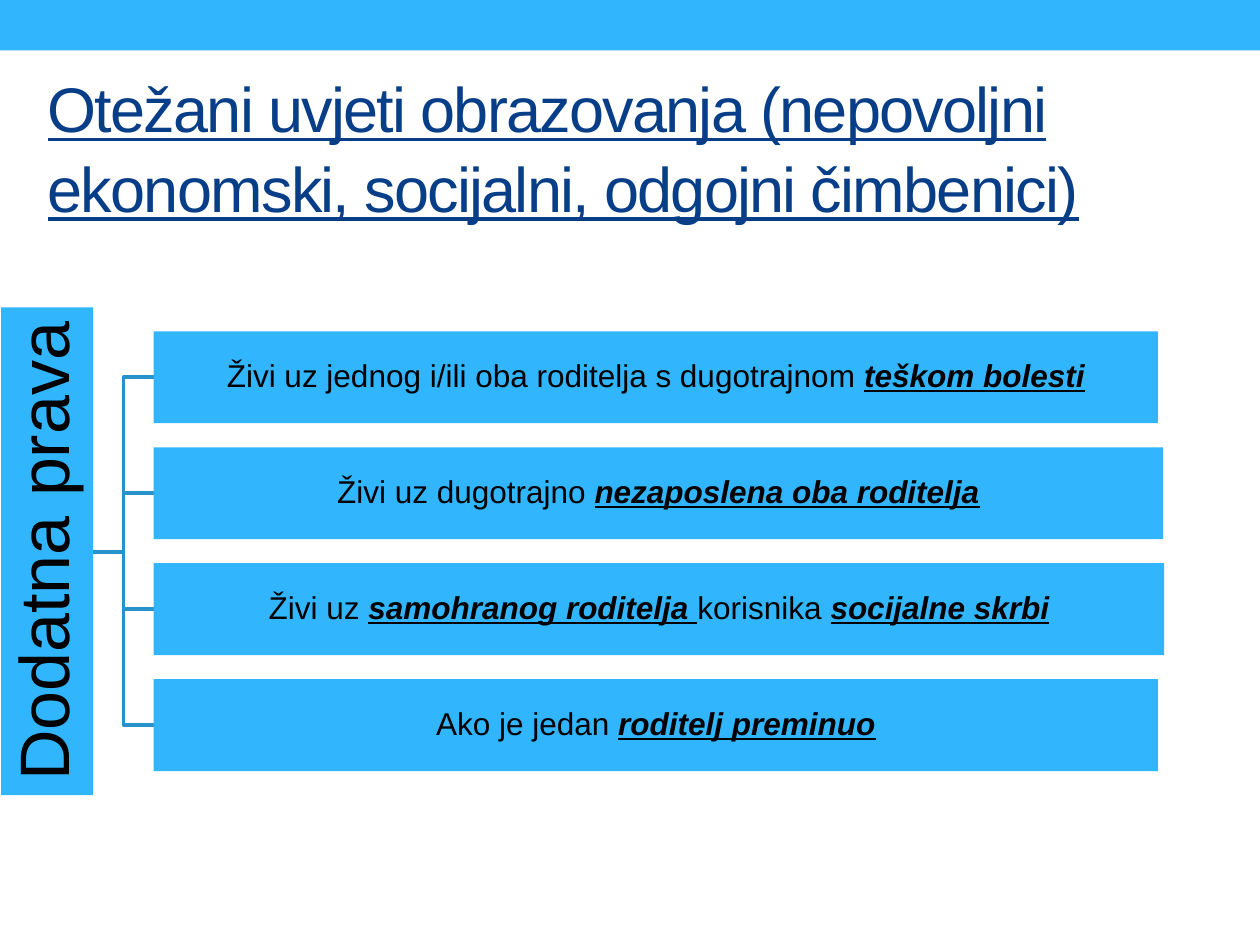
from pptx import Presentation
from pptx.dml.color import RGBColor
from pptx.enum.shapes import MSO_SHAPE
from pptx.enum.text import MSO_ANCHOR, PP_ALIGN
from pptx.util import Inches, Pt

RECTANGLE = MSO_SHAPE.RECTANGLE
MIDDLE = MSO_ANCHOR.MIDDLE
CENTER = PP_ALIGN.CENTER

SKY, NAVY, LINE_BLUE, BLACK = "31B6FD", "073E87", "2792CB", "000000"
FONT = "Arial"
EMPHASIS = {"bold": True, "italic": True, "underline": True}

ROOT_RIGHT, ROOT_MIDDLE = 0.74, 4.38
ROW_LEFT, ROW_TOP, ROW_HEIGHT, ROW_PITCH = 1.22, 2.63, 0.73, 0.92

# Each row: width, then its spans as (text, is emphasised)
ROWS = [
    (7.97, [("Živi uz jednog i/ili oba roditelja s dugotrajnom ", False),
            ("teškom bolesti", True)]),
    (8.01, [("Živi uz dugotrajno ", False), ("nezaposlena oba roditelja", True)]),
    (8.02, [("Živi uz ", False), ("samohranog roditelja ", True),
            ("korisnika ", False), ("socijalne skrbi", True)]),
    (7.97, [("Ako je jedan ", False), ("roditelj preminuo", True)]),
]


def color(hex_string):
    return RGBColor.from_string(hex_string)


def add_span(para, text, size, hex_color, **formats):
    span = para.add_run()
    span.text = text
    span.font.color.rgb = color(hex_color)
    for name, value in {"name": FONT, "size": Pt(size), **formats}.items():
        setattr(span.font, name, value)
    return span


def set_frame(frame, inset):
    margins = dict.fromkeys(
        ("margin_left", "margin_top", "margin_right", "margin_bottom"), Inches(inset))
    for name, value in {"word_wrap": True, "vertical_anchor": MIDDLE, **margins}.items():
        setattr(frame, name, value)


def add_bar(page, left, top, width, height):
    bar = page.shapes.add_shape(
        RECTANGLE, Inches(left), Inches(top), Inches(width), Inches(height))
    bar.shadow.inherit = False
    bar.fill.solid()
    bar.fill.fore_color.rgb = color(SKY)
    bar.line.fill.background()
    return bar


def add_label(bar, spans, size, inset):
    set_frame(bar.text_frame, inset)
    para = bar.text_frame.paragraphs[0]
    para.alignment = CENTER
    para.line_spacing = 0.9
    for text, emphasised in spans:
        add_span(para, text, size, BLACK, **(EMPHASIS if emphasised else {}))


def add_title(page, text):
    box = page.shapes.add_textbox(Inches(0.28), Inches(0.13), Inches(9.29), Inches(2.05))
    set_frame(box.text_frame, 0.1)
    para = box.text_frame.paragraphs[0]
    para.line_spacing = 1.05
    span = add_span(para, text, 36, NAVY, underline=True)
    span.font._element.set("spc", "-100")


def add_branch(page, row_middle):
    """Draw the elbow line from the root bar to one row."""
    bend = (ROOT_RIGHT + ROW_LEFT) / 2
    builder = page.shapes.build_freeform(Inches(ROOT_RIGHT), Inches(ROOT_MIDDLE))
    corners = [(bend, ROOT_MIDDLE), (bend, row_middle), (ROW_LEFT, row_middle)]
    builder.add_line_segments(
        [(Inches(x), Inches(y)) for x, y in corners], close=False)
    branch = builder.convert_to_shape()
    branch.shadow.inherit = False
    branch.fill.background()
    branch.line.color.rgb = color(LINE_BLUE)
    branch.line.width = Pt(2.08)


def main():
    deck = Presentation()
    deck.slide_width, deck.slide_height = Inches(10), Inches(7.5)
    page = deck.slides.add_slide(deck.slide_layouts[6])

    add_bar(page, 0, 0, 10, 0.4)
    add_title(page, "Otežani uvjeti obrazovanja (nepovoljni ekonomski, "
                    "socijalni, odgojni čimbenici)")

    tops = [ROW_TOP + index * ROW_PITCH for index in range(len(ROWS))]
    for top in reversed(tops):
        add_branch(page, top + ROW_HEIGHT / 2)

    root = add_bar(page, -1.56, 4.01, 3.87, 0.73)
    root.rotation = 270
    add_label(root, [("Dodatna prava", False)], 40, 0.03)

    for top, (width, spans) in zip(tops, ROWS):
        row = add_bar(page, ROW_LEFT, top, width, ROW_HEIGHT)
        add_label(row, spans, 18, 0.01)

    deck.save("out.pptx")


if __name__ == "__main__":
    main()
